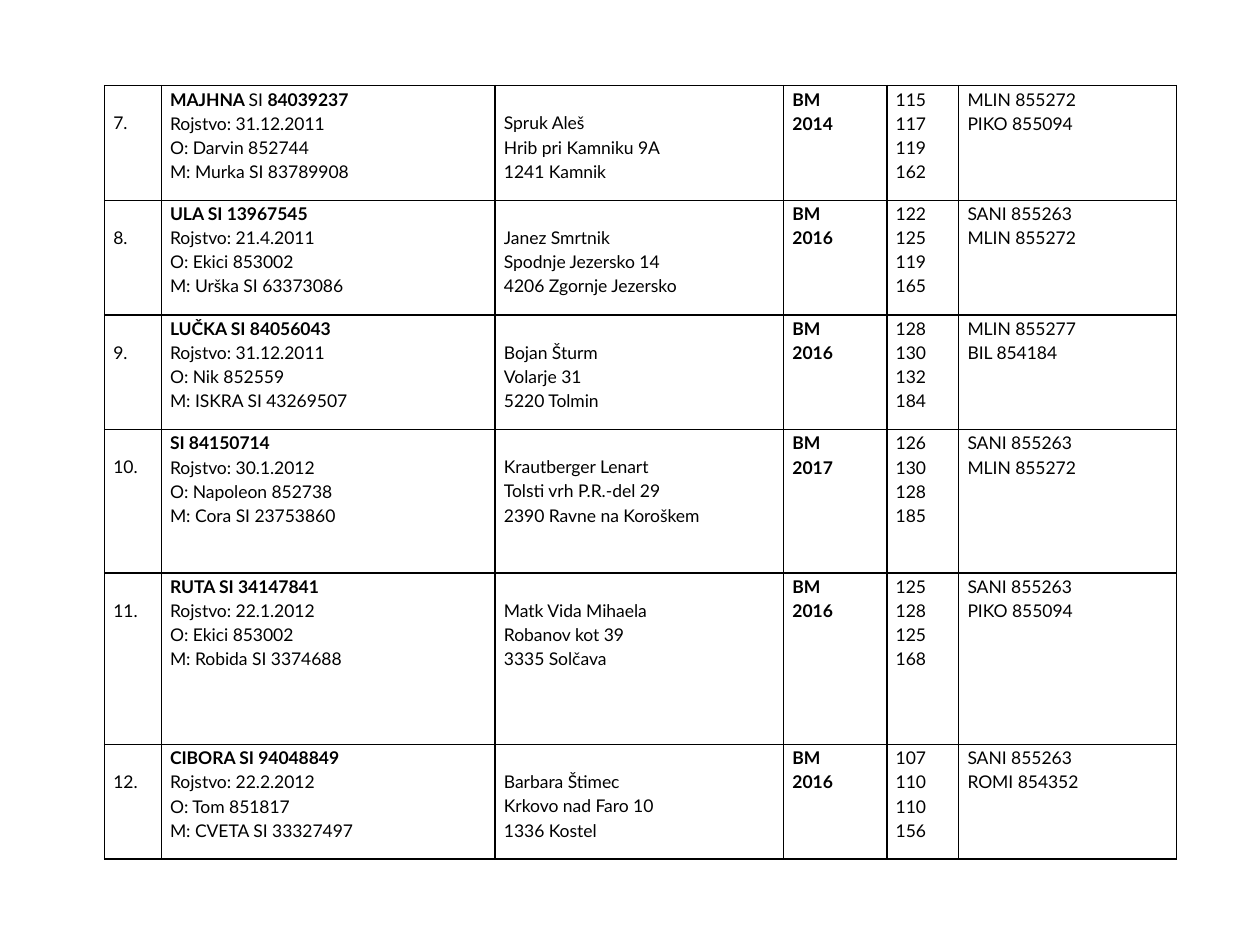
from pptx import Presentation
from pptx.dml.color import RGBColor
from pptx.enum.text import PP_ALIGN
from pptx.oxml.ns import qn
from pptx.util import Inches, Pt
from lxml.etree import SubElement

COLORS = {"ink": "000000"}
COLUMN_WIDTHS = [0.45, 2.65, 2.29, 0.82, 0.57, 1.73]
ROW_HEIGHTS = [0.91, 0.91, 0.91, 1.14, 1.36, 0.91]
LINE_HEIGHT = 0.19
LOWERED_COLUMNS = (0, 2)

ANIMALS = [
    (7, ("MAJHNA ", "SI ", "84039237"), "31.12.2011", "Darvin 852744", "Murka SI 83789908",
     ["Spruk Aleš", "Hrib pri Kamniku 9A", "1241 Kamnik"],
     2014, [115, 117, 119, 162], ["MLIN 855272", "PIKO 855094"]),
    (8, ("ULA SI 13967545",), "21.4.2011", "Ekici 853002", "Urška SI 63373086",
     ["Janez Smrtnik", "Spodnje Jezersko 14", "4206 Zgornje Jezersko"],
     2016, [122, 125, 119, 165], ["SANI 855263", "MLIN 855272"]),
    (9, ("LUČKA SI 84056043",), "31.12.2011", "Nik 852559", "ISKRA SI 43269507",
     ["Bojan Šturm", "Volarje 31", "5220 Tolmin"],
     2016, [128, 130, 132, 184], ["MLIN 855277", "BIL 854184"]),
    (10, ("SI 84150714",), "30.1.2012", "Napoleon 852738", "Cora SI 23753860",
     ["Krautberger Lenart", "Tolsti vrh P.R.-del 29", "2390 Ravne na Koroškem"],
     2017, [126, 130, 128, 185], ["SANI 855263", "MLIN 855272"]),
    (11, ("RUTA SI 34147841",), "22.1.2012", "Ekici 853002", "Robida SI 3374688",
     ["Matk Vida Mihaela", "Robanov kot 39", "3335 Solčava"],
     2016, [125, 128, 125, 168], ["SANI 855263", "PIKO 855094"]),
    (12, ("CIBORA SI 94048849",), "22.2.2012", "Tom 851817", "CVETA SI 33327497",
     ["Barbara Štimec", "Krkovo nad Faro 10", "1336 Kostel"],
     2016, [107, 110, 110, 156], ["SANI 855263", "ROMI 854352"]),
]


def write_span(para, text, font="Lato", size=10, bold=False, color="ink"):
    span = para.add_run()
    span.text = text
    span.font.name = font
    span.font.size = Pt(size)
    span.font.bold = bold
    span.font.color.rgb = RGBColor.from_string(COLORS[color])


def animal_cells(number, name, birth, father, mother, owner, year, measures, bulls):
    return [
        [f"{number}."],
        [name, f"Rojstvo: {birth}", f"O: {father}", f"M: {mother}"],
        owner,
        [("BM",), (str(year),)],
        [str(measure) for measure in measures],
        bulls,
    ]


class SlideBuilder:
    def __init__(self, page, border="ink", border_width=1, line_spacing=1.15):
        self.page = page
        self.border = border
        self.border_width = border_width
        self.line_spacing = line_spacing

    def add_table(self, rows, left, top, widths, heights):
        frame = self.page.shapes.add_table(
            len(heights), len(widths), Inches(left), Inches(top),
            Inches(sum(widths)), Inches(sum(heights)))
        table = frame.table
        table.first_row = False
        table.horz_banding = False
        for column, width in zip(table.columns, widths):
            column.width = Inches(width)
        for row, height, contents in zip(table.rows, heights, rows):
            row.height = Inches(height)
            for index, (cell, lines) in enumerate(zip(row.cells, contents)):
                lowered = index in LOWERED_COLUMNS
                self.fill_cell(cell, lines, LINE_HEIGHT if lowered else 0)

    def fill_cell(self, cell, lines, top_margin):
        cell.margin_left = cell.margin_right = Inches(0.07)
        cell.margin_top = Inches(top_margin)
        cell.margin_bottom = 0
        self.add_borders(cell)
        cell.fill.background()
        for index, line in enumerate(lines):
            frame = cell.text_frame
            para = frame.add_paragraph() if index else frame.paragraphs[0]
            para.alignment = PP_ALIGN.JUSTIFY
            para.line_spacing = self.line_spacing
            if isinstance(line, tuple):
                for position, text in enumerate(line):
                    write_span(para, text, bold=position % 2 == 0)
            else:
                write_span(para, line)

    def add_borders(self, cell):
        properties = cell._tc.get_or_add_tcPr()
        for side in ("a:lnL", "a:lnR", "a:lnT", "a:lnB"):
            line = SubElement(properties, qn(side), w=str(Pt(self.border_width)))
            fill = SubElement(line, qn("a:solidFill"))
            SubElement(fill, qn("a:srgbClr"), val=COLORS[self.border])


def main():
    deck = Presentation()
    deck.slide_width = Inches(10)
    deck.slide_height = Inches(7.5)
    page = deck.slides.add_slide(deck.slide_layouts[6])
    builder = SlideBuilder(page)
    rows = [animal_cells(*animal) for animal in ANIMALS]
    builder.add_table(rows, 0.83, 0.68, COLUMN_WIDTHS, ROW_HEIGHTS)
    deck.save("out.pptx")


if __name__ == "__main__":
    main()
